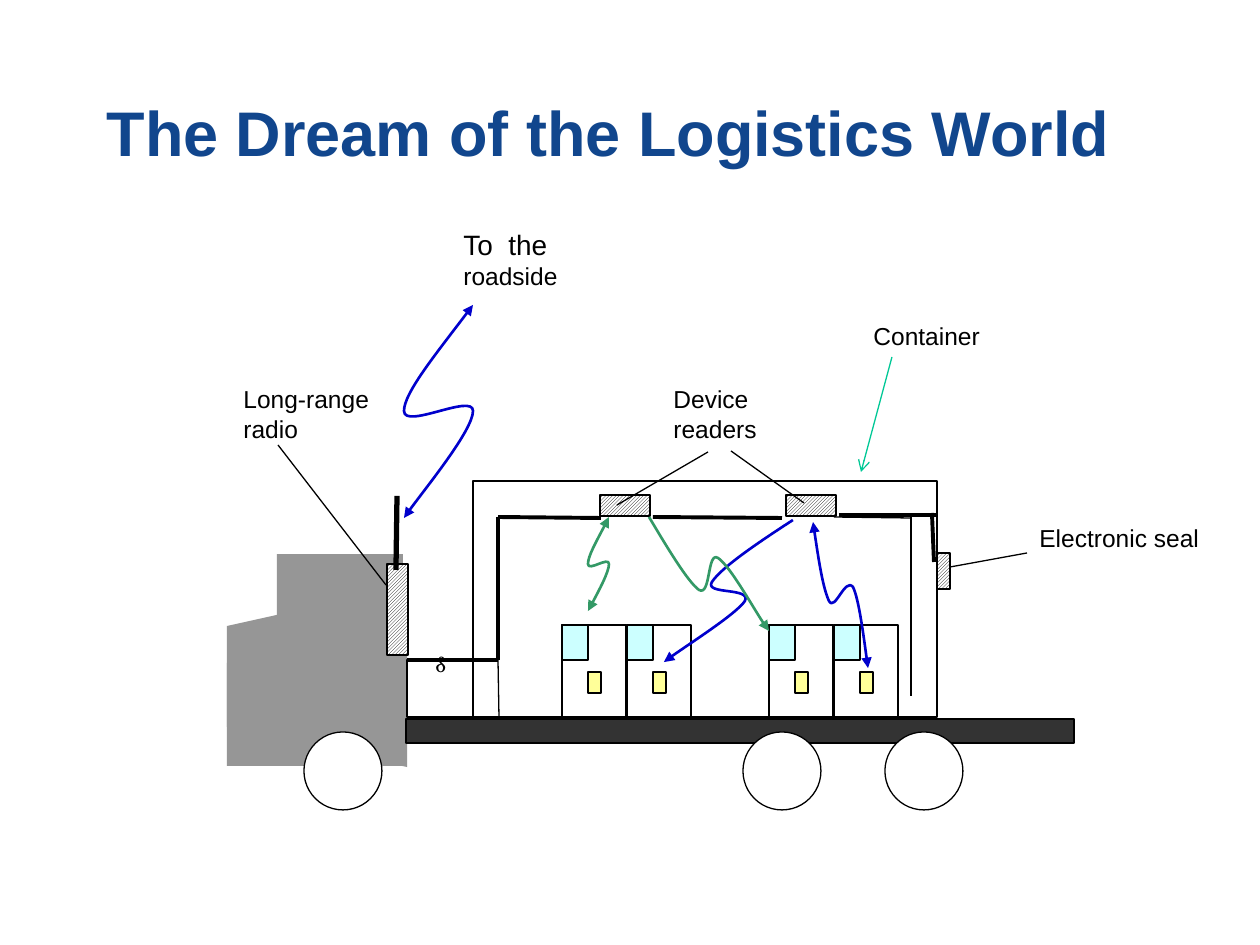
from dataclasses import dataclass

from pptx import Presentation
from pptx.dml.color import RGBColor as Rgb
from pptx.enum.dml import MSO_PATTERN as Pattern
from pptx.enum.shapes import MSO_CONNECTOR as Link, MSO_SHAPE as Kind
from pptx.enum.text import MSO_ANCHOR as Anchor, MSO_AUTO_SIZE as Fit, PP_ALIGN as Align
from pptx.oxml.ns import qn
from pptx.util import Pt
from lxml.etree import SubElement

SCALE = 914400 / 126  # EMU in one px


@dataclass(frozen=True)
class Theme:
    title: str = "11468D"
    ink: str = "000000"
    paper: str = "FFFFFF"
    cab: str = "969696"
    bed: str = "333333"
    glass: str = "CCFFFF"
    tag: str = "FFFF99"
    blue: str = "0000CC"
    green: str = "339966"
    mint: str = "00C896"
    font: str = "Arial"
    greek: str = "TeX Gyre Schola"
    head: int = 36
    large: int = 16
    body: int = 14
    small: int = 12
    thin: float = 0.75
    signal: float = 1.5
    wire: float = 2.25
    mast: float = 3


T = Theme()
HATCH = "hatch"

# Content: text runs with sizes, then left, top, width, height
TITLE = "The Dream of the Logistics World"
LABELS = [
    ([("δ", T.small)], (423, 645, 52, 72), T.greek),
    ([("To  the ", T.large), ("roadside", T.body)], (451, 221, 179, 84), T.font),
    ([("Device readers", T.body)], (661, 378, 130, 72), T.font),
    ([("Long-range radio", T.body)], (231, 378, 168, 72), T.font),
    ([("Electronic seal", T.body)], (1027, 517, 233, 72), T.font),
    ([("Container", T.body)], (861, 315, 147, 43), T.font),
]

# Truck parts
HOOD = [(407, 586), (227, 626), (227, 727), (407, 767)]
CAB = [(277, 554, 126, 181), (227, 663, 176, 103)]
RADIO = (387, 564, 21, 91)
BED = (406, 719, 668, 24)
HITCH = (407, 660, 66, 57)
HULL = (473, 481, 464, 236)
READERS = [(600, 495, 50, 21), (786, 495, 50, 21)]
SEAL = (937, 553, 13, 36)
WHEELS = [304, 743, 885]
WHEEL_TOP, WHEEL = 732, 78

# Cargo: pairs of boxes standing side by side
PAIRS, STEP = [562, 769], 65
BOX_TOP, BOX_W, BOX_H = 625, 64, 92
PANE_W, PANE_H = 26, 35
TAG_TOP, TAG_W, TAG_H = 672, 13, 21

# Straight lines by width
LINES = [
    (T.mast, [(397, 496, 396, 570)]),
    (T.wire, [(407, 660, 498, 660), (498, 660, 498, 517), (498, 517, 601, 518),
              (653, 517, 782, 518), (934, 562, 932, 513), (839, 515, 936, 515)]),
    (T.thin, [(498, 660, 499, 717), (834, 517, 911, 518), (911, 517, 911, 696),
              (708, 452, 617, 505), (731, 451, 804, 503), (278, 445, 386, 585),
              (1027, 553, 950, 567)]),
]
POINTER = (892, 357, 861, 472)

# Radio signals: colour, two-way flag, start and Bezier points
SIGNALS = [
    (T.blue, True, [(473, 305), (440, 349), (404, 393), (404, 411), (404, 430),
                    (473, 393), (473, 411), (473, 430), (416, 500), (404, 518)]),
    (T.green, True, [(609, 517), (599, 537), (588, 556), (588, 564), (588, 572),
                     (609, 556), (609, 564), (609, 572), (592, 604), (588, 611)]),
    (T.blue, False, [(793, 520), (756, 544), (721, 568), (712, 582), (704, 595),
                     (752, 587), (745, 601), (736, 614), (678, 651), (664, 662)]),
    (T.green, False, [(649, 517), (668, 549), (688, 582), (699, 590), (711, 597),
                      (707, 551), (718, 558), (730, 566), (760, 620), (769, 631)]),
    (T.blue, True, [(813, 522), (818, 556), (823, 588), (829, 601), (835, 612),
                    (845, 577), (853, 587), (859, 599), (866, 654), (868, 668)]),
]


def emu(*vals):
    return [round(v * SCALE) for v in vals]


def paint(shape, fill=None, line=None, width=T.thin):
    shape.shadow.inherit = False
    if fill == HATCH:
        shape.fill.patterned()
        shape.fill.pattern = Pattern.LIGHT_UPWARD_DIAGONAL
        shape.fill.fore_color.rgb = Rgb.from_string(T.ink)
        shape.fill.back_color.rgb = Rgb.from_string(T.paper)
    elif fill:
        shape.fill.solid()
        shape.fill.fore_color.rgb = Rgb.from_string(fill)
    else:
        shape.fill.background()
    if line:
        shape.line.color.rgb = Rgb.from_string(line)
        shape.line.width = Pt(width)
    else:
        shape.line.fill.background()


def block(area, fill=None, line=T.ink, kind=Kind.RECTANGLE):
    paint(shapes.add_shape(kind, *emu(*area)), fill, line)


def outline(points, close):
    pen = shapes.build_freeform(*points[0], scale=SCALE)
    pen.add_line_segments(points[1:], close=close)
    return pen.convert_to_shape()


def tip(shape, end, style):
    SubElement(shape.line._get_or_add_ln(), qn(f"a:{end}"), type=style)


def signal(color, both, points):
    shape = outline(points, False)
    paint(shape, None, color, T.signal)
    # Turn each three segments into one Bezier curve
    segs = list(shape._element.iter(qn("a:lnTo")))
    track = segs[0].getparent()
    for i in range(0, len(segs), 3):
        curve = SubElement(track, qn("a:cubicBezTo"))
        for seg in segs[i:i + 3]:
            curve.append(seg[0])
            track.remove(seg)
    if both:
        tip(shape, "headEnd", "triangle")
    tip(shape, "tailEnd", "triangle")


def stroke(ends, width, color=T.ink):
    line = shapes.add_connector(Link.STRAIGHT, *emu(*ends))
    line.line.color.rgb = Rgb.from_string(color)
    line.line.width = Pt(width)
    SubElement(line._element.spPr, qn("a:effectLst"))
    return line


def style(run, size, color=T.ink, font=T.font, bold=False):
    run.font.name, run.font.size, run.font.bold = font, Pt(size), bold
    run.font.color.rgb = Rgb.from_string(color)


def label(parts, area, font):
    frame = shapes.add_textbox(*emu(*area)).text_frame
    frame.word_wrap = True
    for text, size in parts:
        run = frame.paragraphs[0].add_run()
        run.text = text
        style(run, size, font=font)


deck = Presentation()
deck.slide_width, deck.slide_height = emu(1260, 945)
shapes = deck.slides.add_slide(deck.slide_layouts[5]).shapes

# Title
title = shapes.title
title.left, title.top, title.width, title.height = emu(94, 32, 1097, 198)
frame = title.text_frame
frame.text = TITLE
frame.auto_size, frame.vertical_anchor = Fit.NONE, Anchor.MIDDLE
frame.paragraphs[0].alignment = Align.LEFT
style(frame.paragraphs[0].runs[0], T.head, T.title, bold=True)

# Truck and container
paint(outline(HOOD, True), T.cab)
for area in CAB:
    block(area, T.cab, None)
block(RADIO, HATCH)
block(BED, T.bed)
block(HITCH, T.paper)
block(HULL)
for area in [*READERS, SEAL]:
    block(area, HATCH)
for x in WHEELS:
    block((x, WHEEL_TOP, WHEEL, WHEEL), T.paper, kind=Kind.OVAL)

# Cargo boxes with pane and tag
for x in [left + n * STEP for left in PAIRS for n in range(2)]:
    block((x, BOX_TOP, BOX_W, BOX_H), T.paper)
    block((x, BOX_TOP, PANE_W, PANE_H), T.glass)
    block((x + PANE_W, TAG_TOP, TAG_W, TAG_H), T.tag)

# Wires, pointers, signals and labels
for width, group in LINES:
    for ends in group:
        stroke(ends, width)
for item in SIGNALS:
    signal(*item)
for item in LABELS:
    label(*item)
tip(stroke(POINTER, T.thin, T.mint), "tailEnd", "arrow")

deck.save("out.pptx")
